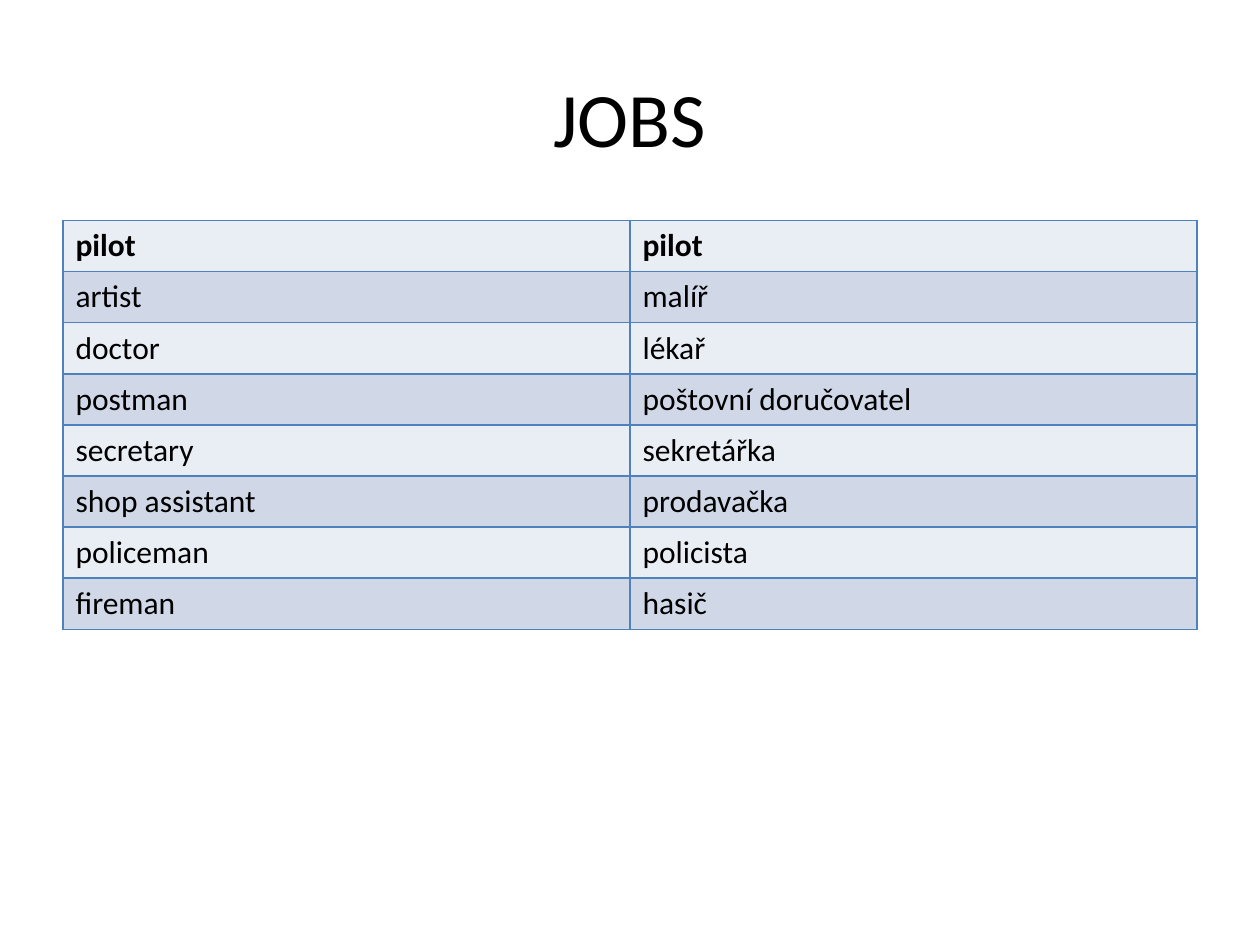
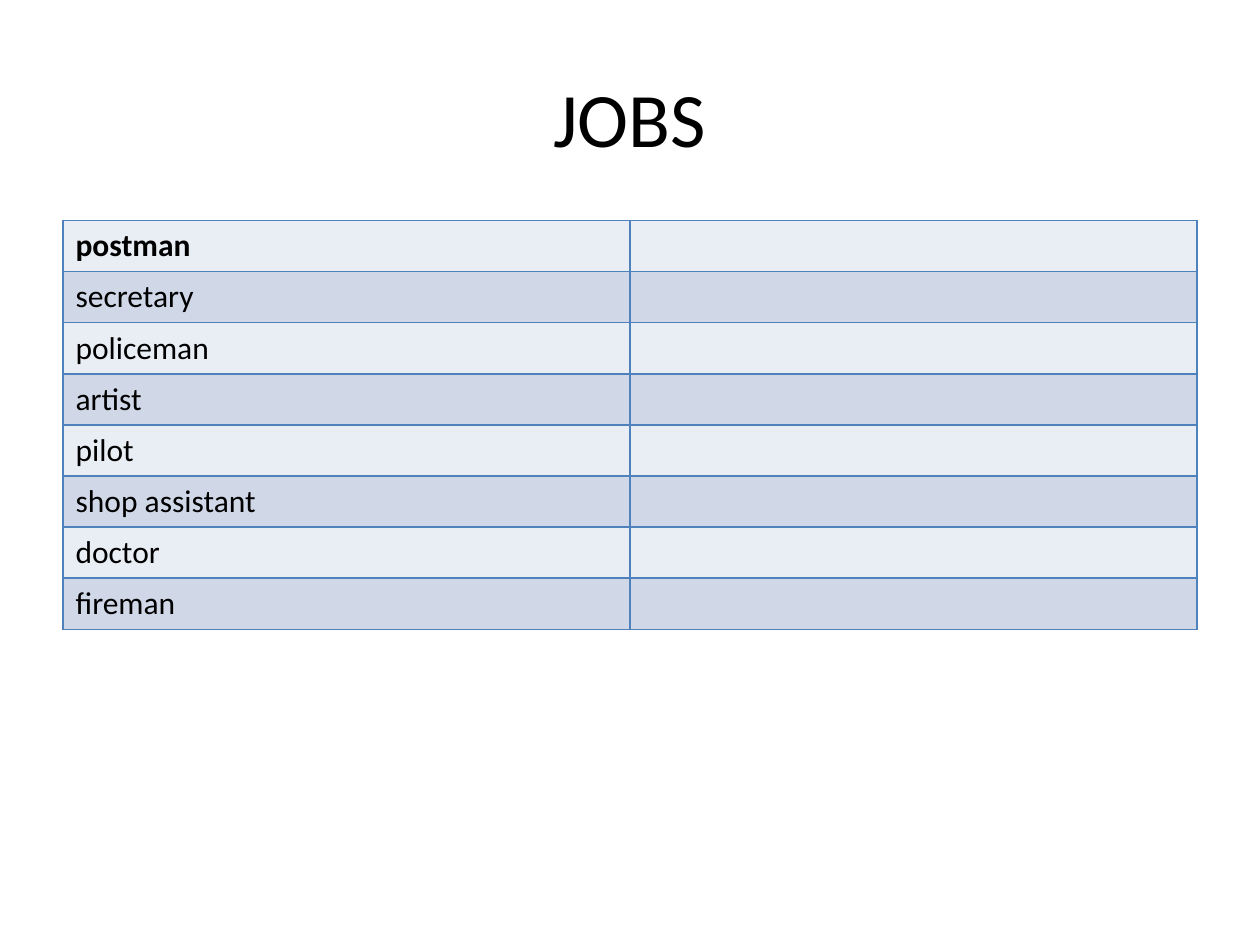
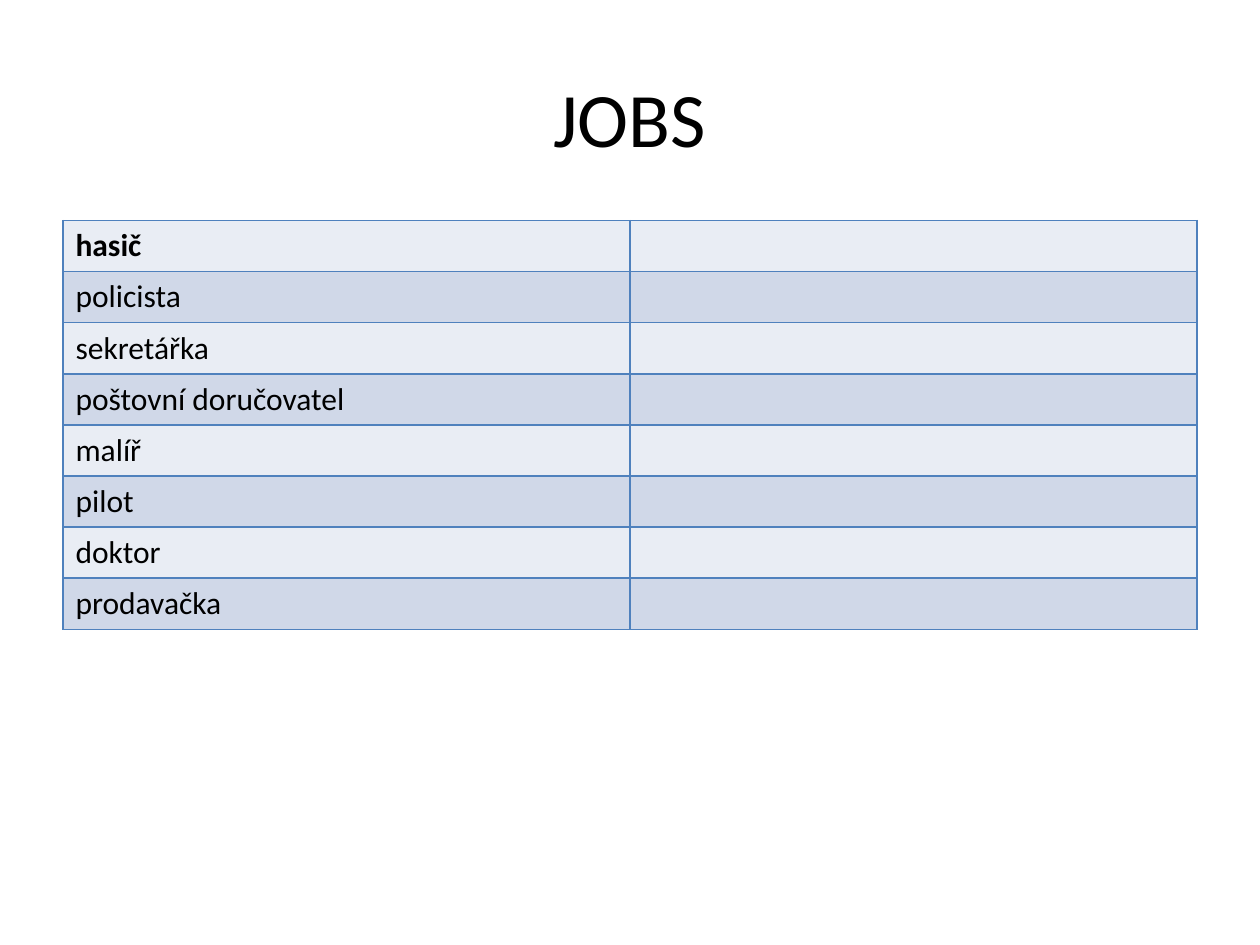
from pptx import Presentation
from pptx.dml.color import RGBColor as RGB
from pptx.enum.text import MSO_ANCHOR as Anchor, PP_ALIGN as Align
from pptx.oxml import parse_xml
from pptx.oxml.ns import nsdecls
from pptx.util import Pt

HUES = {"ink": "000000", "page": "FFFFFF", "line": "4F81BD",
        "light": "E9EDF4", "dark": "D0D8E8"}
FONT = "Calibri"
LEFT, WIDTH = 36, 648

PAIRS = [("pilot", "pilot"), ("artist", "malíř"), ("doctor", "lékař"),
         ("postman", "poštovní doručovatel"), ("secretary", "sekretářka"),
         ("shop assistant", "prodavačka"), ("policeman", "policista"),
         ("fireman", "hasič")]
ENGLISH = ["postman", "secretary", "policeman", "artist", "pilot",
           "shop assistant", "doctor", "fireman"]
CZECH = ["hasič", "policista", "sekretářka", "poštovní doručovatel",
         "malíř", "pilot", "doktor", "prodavačka"]


def write(frame, text, size=18, bold=False, align=Align.LEFT, hue="ink"):
    """Put one formatted line of text into a text frame."""
    para = frame.paragraphs[0]
    para.alignment = align
    para.font.size = Pt(size)
    if text:
        run = para.add_run()
        run.text = text
        font = run.font
        font.name, font.size, font.bold = FONT, Pt(size), bold
        font.color.rgb = RGB.from_string(HUES[hue])


class Deck:
    """Holds the shared style and the current slide."""

    def __init__(self):
        """Start an empty deck of 10 by 7.5 inches."""
        self.prs = Presentation()
        self.prs.slide_width, self.prs.slide_height = Pt(720), Pt(540)
        self.slide = None

    def page(self, title):
        """Add a slide with a centred title."""
        self.slide = self.prs.slides.add_slide(self.prs.slide_layouts[5])
        fill = self.slide.background.fill
        fill.solid()
        fill.fore_color.rgb = RGB.from_string(HUES["page"])
        head = self.slide.shapes.title
        head.left, head.top = Pt(LEFT), Pt(21.6)
        head.width, head.height = Pt(WIDTH), Pt(90)
        head.text_frame.vertical_anchor = Anchor.MIDDLE
        write(head.text_frame, title, size=44, align=Align.CENTER)

    def edge(self, cell):
        """Draw a thin line on all four sides of a cell."""
        props = cell._tc.get_or_add_tcPr()
        for side in "LRTB":
            props.append(parse_xml(
                f'<a:ln{side} {nsdecls("a")} w="{Pt(1)}"><a:solidFill>'
                f'<a:srgbClr val="{HUES["line"]}"/></a:solidFill></a:ln{side}>'))

    def table(self, rows, top=126, step=29.2):
        """Add a banded word table whose first row is bold."""
        frame = self.slide.shapes.add_table(
            len(rows), len(rows[0]), Pt(LEFT), Pt(top),
            Pt(WIDTH), Pt(step * len(rows)))
        grid = frame.table
        grid.first_row = grid.horz_banding = False
        for r, row in enumerate(rows):
            grid.rows[r].height = Pt(step)
            for c, word in enumerate(row):
                cell = grid.cell(r, c)
                self.edge(cell)
                cell.fill.solid()
                band = "dark" if r % 2 else "light"
                cell.fill.fore_color.rgb = RGB.from_string(HUES[band])
                write(cell.text_frame, word, bold=r == 0)


def main():
    """Build the word list and its two exercises."""
    deck = Deck()
    blanks = [[(word, "") for word in words] for words in (ENGLISH, CZECH)]
    for rows in [PAIRS, *blanks]:
        deck.page("JOBS")
        deck.table(rows)
    deck.prs.save("out.pptx")


if __name__ == "__main__":
    main()
